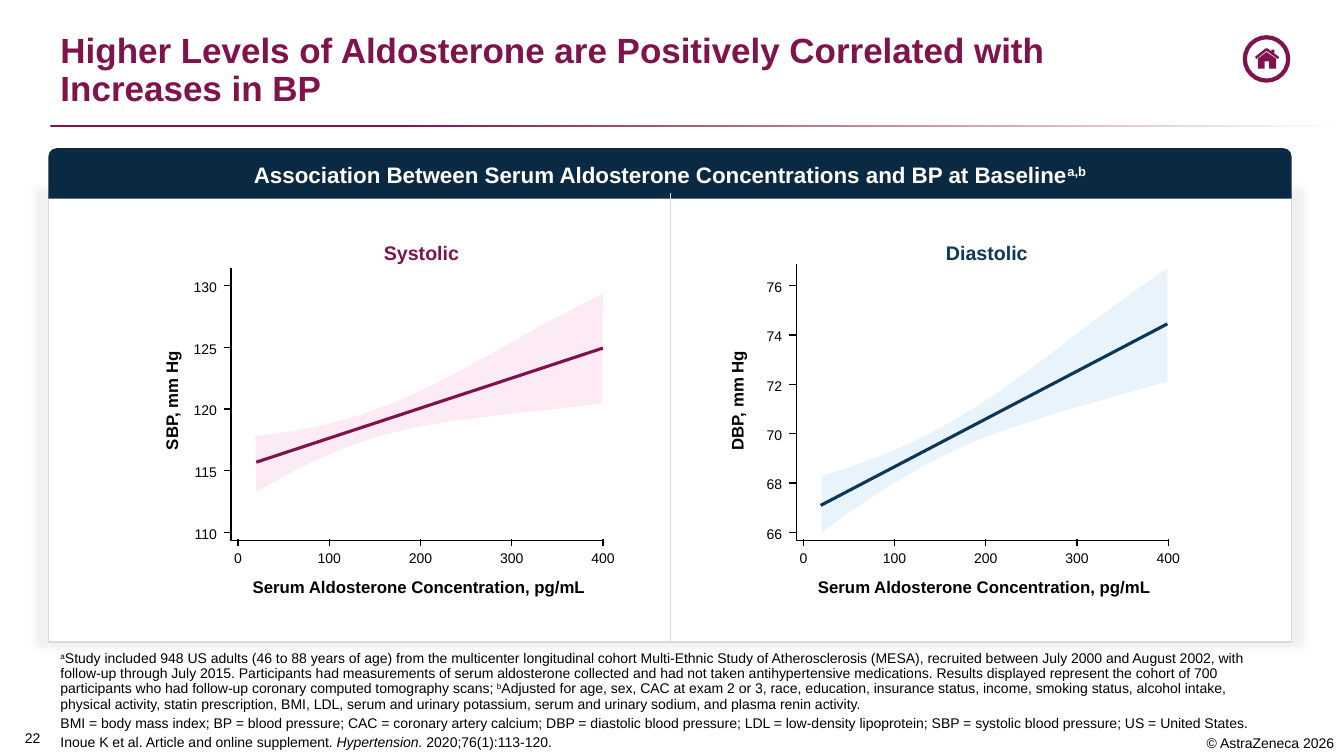
from dataclasses import dataclass

from lxml import etree
from pptx import Presentation
from pptx.dml.color import RGBColor
from pptx.enum.shapes import MSO_CONNECTOR, MSO_SHAPE
from pptx.enum.text import MSO_ANCHOR, MSO_AUTO_SIZE, PP_ALIGN
from pptx.oxml.ns import qn
from pptx.util import Inches, Pt

LEFT, CENTER, RIGHT = PP_ALIGN.LEFT, PP_ALIGN.CENTER, PP_ALIGN.RIGHT
MIDDLE, BOTTOM = MSO_ANCHOR.MIDDLE, MSO_ANCHOR.BOTTOM
NO_FIT = MSO_AUTO_SIZE.NONE
STRAIGHT = MSO_CONNECTOR.STRAIGHT
RECT, OVAL, TAB = MSO_SHAPE.RECTANGLE, MSO_SHAPE.OVAL, MSO_SHAPE.ROUND_2_SAME_RECTANGLE
COLUMNS, ROWS = 160, 90
SUPER = {"raised": True}


@dataclass(frozen=True)
class Theme:
    font: str = "Arial"
    plum: str = "7F134C"
    navy: str = "0D3759"
    banner: str = "0A2943"
    pink: str = "E34196"
    sky: str = "298EE0"
    grey: str = "D9D9D9"
    ink: str = "000000"
    paper: str = "FFFFFF"
    title: float = 25
    heading: float = 16
    subheading: float = 14
    axis: float = 12
    small: float = 10


THEME = Theme()


def rgb(color):
    return RGBColor.from_string(color)


def write(frame, *paragraphs, size=THEME.small, color=THEME.ink, bold=False, align=LEFT,
          anchor=MIDDLE, margins=(0, 0, 0, 0), spacing=None, before=0):
    frame.word_wrap, frame.auto_size, frame.vertical_anchor = True, NO_FIT, anchor
    (frame.margin_left, frame.margin_top,
     frame.margin_right, frame.margin_bottom) = map(Inches, margins)
    for index, runs in enumerate(paragraphs):
        paragraph = frame.add_paragraph() if index else frame.paragraphs[0]
        properties = paragraph._p.get_or_add_pPr()
        properties.set("marL", "0")
        properties.set("indent", "0")
        etree.SubElement(properties, qn("a:buNone"))
        paragraph.alignment, paragraph.line_spacing = align, spacing
        paragraph.space_before = Pt(before if index else 0)
        for content, style in runs:
            for number, part in enumerate(content.split("\n")):
                if number:
                    paragraph.add_line_break()
                run = paragraph.add_run()
                run.text = part
                run.font.name, run.font.size = THEME.font, Pt(size)
                run.font.bold, run.font.italic = bold, style.get("italic", False)
                run.font.color.rgb = rgb(color)
                if style.get("raised"):
                    run._r.get_or_add_rPr().set("baseline", "30000")


class Board:
    def __init__(self, deck, theme):
        self.theme = theme
        self.column, self.row = deck.slide_width / COLUMNS, deck.slide_height / ROWS
        self.slide = deck.slides.add_slide(deck.slide_layouts[1])

    def point(self, x, y):
        return round(x * self.column), round(y * self.row)

    def box(self, x, y, width, height):
        return self.point(x, y) + self.point(width, height)

    def placeholder(self, index, place, *paragraphs, **style):
        holder = self.slide.placeholders[index]
        holder.left, holder.top, holder.width, holder.height = self.box(*place)
        write(holder.text_frame, *paragraphs, margins=(0.1, 0.05, 0.1, 0.05), **style)

    def label(self, place, content, rotation=0, **style):
        area = self.slide.shapes.add_textbox(*self.box(*place))
        area.rotation = rotation
        write(area.text_frame, [(content, {})], **style)

    def paint(self, shape, fill, line, width):
        shape.shadow.inherit = False
        if fill:
            shape.fill.solid()
            shape.fill.fore_color.rgb = rgb(fill)
        else:
            shape.fill.background()
        if line:
            shape.line.color.rgb, shape.line.width = rgb(line), Pt(width)
        else:
            shape.line.fill.background()
        return shape

    def shape(self, kind, place, fill=None, line=None, width=1):
        shape = self.slide.shapes.add_shape(kind, *self.box(*place))
        return self.paint(shape, fill, line, width)

    def outline(self, points, fill=None, line=None, width=1, closed=True, alpha=100):
        start, *rest = [self.point(*point) for point in points]
        builder = self.slide.shapes.build_freeform(*start)
        builder.add_line_segments(rest, close=closed)
        shape = self.paint(builder.convert_to_shape(), fill, line, width)
        if alpha < 100:
            tint = shape._element.spPr.find(qn("a:solidFill"))[0]
            etree.SubElement(tint, qn("a:alpha"), val=str(alpha * 1000))

    def line(self, start, end, color, width=1):
        line = self.slide.shapes.add_connector(STRAIGHT, *self.point(*start), *self.point(*end))
        line.line.color.rgb, line.line.width = rgb(color), Pt(width)
        etree.SubElement(line._element.spPr, qn("a:effectLst"))

    def fade(self, place, color):
        rule = self.shape(RECT, place, color)
        rule.fill.gradient()
        rule.fill.gradient_angle = 0
        for stop, (position, tone) in zip(rule.fill.gradient_stops,
                                          ((0.26, color), (1, self.theme.paper))):
            stop.position, stop.color.rgb = position, rgb(tone)

    def glow(self, shape):
        effects = shape._element.spPr.find(qn("a:effectLst"))
        shadow = etree.SubElement(effects, qn("a:outerShdw"), blurRad=str(Pt(5)), sx="102000",
                                  sy="102000", algn="ctr", rotWithShape="0")
        tone = etree.SubElement(shadow, qn("a:srgbClr"), val=self.theme.ink)
        etree.SubElement(tone, qn("a:alpha"), val="5000")

    def regression(self, left, top, name, measure, ticks, trend, band, color, tint):
        theme, high, low, base = self.theme, 34, 63.4, 64.32
        first, last, step, tick = ticks[0], ticks[-1], 10.86, 0.84

        def place(dose, pressure):
            return (left + tick + dose / 100 * step,
                    low - (pressure - first) / (last - first) * (low - high))

        self.outline([(left + 44.4, base), (left, base), (left, top)],
                     line=theme.ink, closed=False)
        for pressure in ticks:
            y = place(0, pressure)[1]
            self.line((left - tick, y), (left, y), theme.ink)
            self.label((left - 4.68, y - 0.88, 3, 2.04), str(pressure), align=RIGHT)
        for dose in range(0, 401, 100):
            x = place(dose, first)[0]
            self.line((x, base + 0.72), (x, base - 0.12), theme.ink)
            self.label((x - 1.5, 65.4, 3, 2.04), str(dose), align=CENTER)
        self.label((left - 18.9, 46.44, 23.64, 2.52), measure, rotation=270,
                   size=theme.axis, bold=True, align=CENTER)
        self.label((left + 2.4, 68.64, 39.96, 2.4), "Serum Aldosterone Concentration, pg/mL",
                   size=theme.axis, bold=True, align=CENTER)
        self.label((left + 11.52, 28.68, 22.32, 2.88), name, size=theme.subheading,
                   color=color, bold=True, align=CENTER)
        edges = [place(*point) for curve in band for point in bezier(curve)]
        self.outline(edges, fill=tint, alpha=10)
        self.line(place(*trend[0]), place(*trend[1]), color, 2.25)


def bezier(controls, steps=30):
    for index in range(steps + 1):
        t = index / steps
        weights = ((1 - t) ** 3, 3 * t * (1 - t) ** 2, 3 * t * t * (1 - t), t ** 3)
        yield tuple(sum(w * value for w, value in zip(weights, axis)) for axis in zip(*controls))


def main():
    deck = Presentation()
    deck.slide_width, deck.slide_height = Inches(13.33), Inches(7.5)
    board = Board(deck, THEME)
    board.label((133.3, 86.76, 26.7, 3.24), "© AstraZeneca 2026", align=RIGHT,
                anchor=BOTTOM, margins=(0.1, 0.05, 0.1, 0.05))
    board.fade((6, 14.88, 154, 0.24), THEME.plum)
    board.shape(OVAL, (148.2, 4.44, 5.16, 5.16), THEME.paper, THEME.plum, 3)
    roof = [(152.2, 6.72), (151.7, 6.36), (151.7, 5.9), (151.35, 5.9), (151.35, 6.12),
            (150.9, 5.76), (150.65, 5.76), (149.4, 6.78), (149.58, 7.02), (150.78, 6.06),
            (152.1, 7), (152.28, 6.9)]
    walls = [(150.78, 6.2), (149.76, 6.98), (149.76, 8.16), (150.55, 8.16), (150.55, 7.32),
             (151.1, 7.32), (151.1, 8.16), (151.92, 8.16), (151.92, 6.98)]
    for part in (roof, walls):
        board.outline(part, fill=THEME.plum)
    board.placeholder(0, (6, 3, 148, 10.56), [(
        "Higher Levels of Aldosterone are Positively Correlated with \nIncreases in BP", {})],
        size=THEME.title, color=THEME.plum, bold=True, anchor=BOTTOM, spacing=0.9)
    board.label((0, 85.2, 6, 4.8), "22", align=RIGHT, margins=(0.1, 0.05, 0.1, 0))
    board.glow(board.shape(RECT, (5.76, 22.92, 148, 53.52), THEME.paper, THEME.grey))
    board.placeholder(
        1, (6, 76.8, 147.84, 13.2),
        [("a", SUPER),
         ("Study included 948 US adults (46 to 88 years of age) from the multicenter longitudinal cohort Multi-Ethnic Study of Atherosclerosis (MESA), recruited between July 2000 and August 2002, with follow-up through July 2015. Participants had measurements of serum aldosterone collected and had not taken antihypertensive medications. Results displayed represent the cohort of 700 participants who had follow-up coronary computed tomography scans; ", {}),
         ("b", SUPER),
         ("Adjusted for age, sex, CAC at exam 2 or 3, race, education, insurance status, income, smoking status, alcohol intake, \nphysical activity, statin prescription, BMI, LDL, serum and urinary potassium, serum and urinary sodium, and plasma renin activity.", {})],
        [("BMI = body mass index; BP = blood pressure; CAC = coronary artery calcium; DBP = diastolic blood pressure; LDL = low-density lipoprotein; SBP = systolic blood pressure; US = United States.", {})],
        [("Inoue K et al. Article and online supplement. ", {}),
         ("Hypertension. ", {"italic": True}), ("2020;76(1):113-120.", {})],
        anchor=BOTTOM, spacing=0.9, before=3)
    board.regression(
        27.5, 31.92, "Systolic", "SBP, mm Hg", range(110, 131, 5), [(20, 115.7), (400, 124.94)],
        [[(19, 117.84), (181, 118.9), (256.4, 124.2), (400, 129.35)],
         [(399, 120.45), (217.7, 118.82), (155.8, 119.22), (20, 113.27)]],
        THEME.plum, THEME.pink)
    board.regression(
        94.8, 31.44, "Diastolic", "DBP, mm Hg", range(66, 77, 2), [(19, 67.1), (399, 74.45)],
        [[(20, 68.29), (190, 70.12), (248.6, 72.94), (399, 76.69)],
         [(399, 72.12), (221, 70.2), (168, 70), (20, 66)]],
        THEME.navy, THEME.sky)
    banner = board.shape(TAB, (5.76, 17.64, 148, 6), THEME.banner)
    write(banner.text_frame, [
        ("Association Between Serum Aldosterone Concentrations and BP at Baseline", {}),
        ("a,b", SUPER)], size=THEME.heading, color=THEME.paper, bold=True, align=CENTER)
    board.line((79.8, 22.92), (79.8, 76.44), THEME.grey, 0.5)
    deck.save("out.pptx")


if __name__ == "__main__":
    main()
